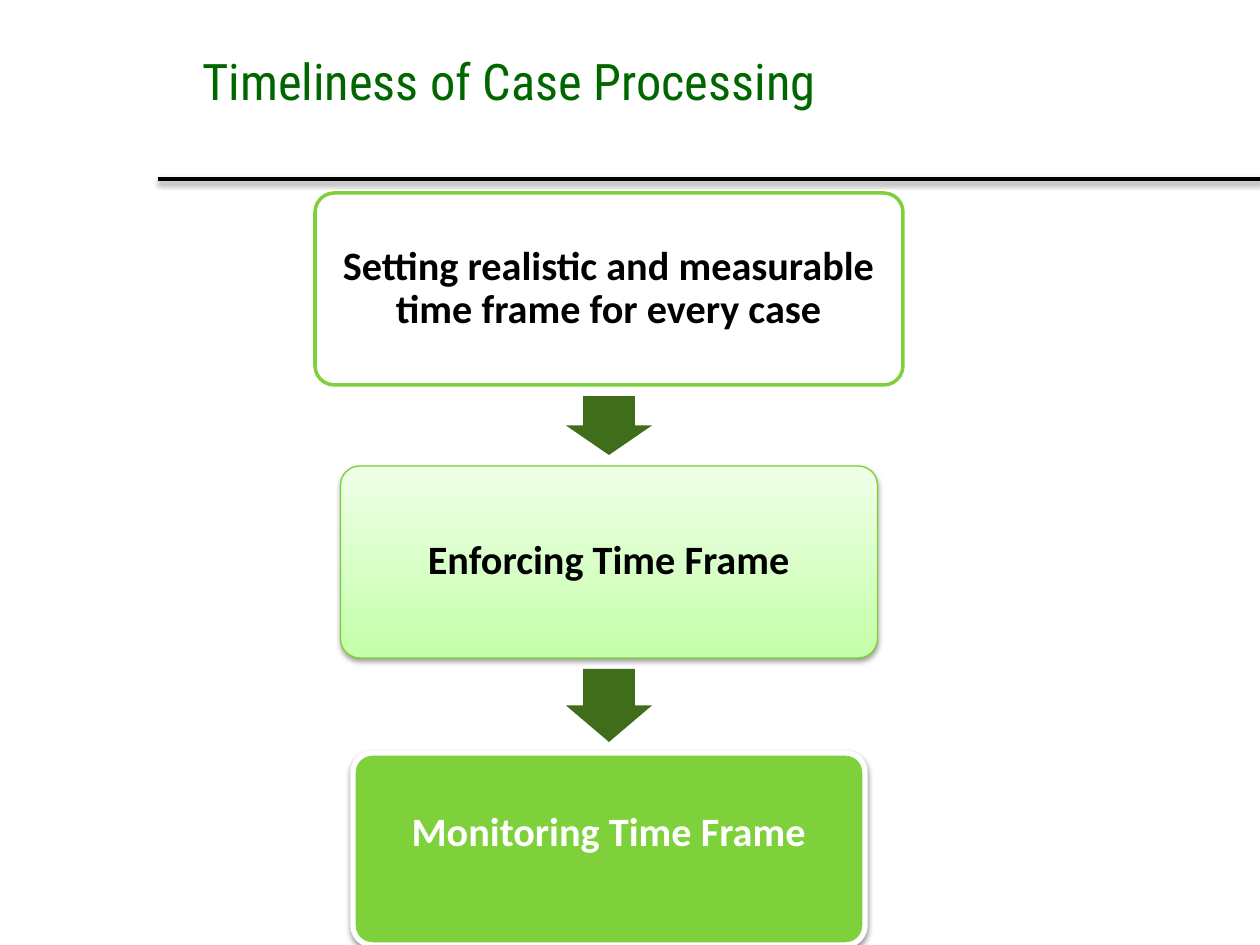
from lxml import etree
from pptx import Presentation
from pptx.dml.color import RGBColor
from pptx.enum.shapes import MSO_CONNECTOR, MSO_SHAPE
from pptx.enum.text import MSO_ANCHOR, PP_ALIGN
from pptx.oxml.ns import qn
from pptx.util import Emu, Pt

ROUND = MSO_SHAPE.ROUNDED_RECTANGLE
DOWN = MSO_SHAPE.DOWN_ARROW
STRAIGHT = MSO_CONNECTOR.STRAIGHT
MIDDLE = MSO_ANCHOR.MIDDLE
CENTER = PP_ALIGN.CENTER

SCALE = 914400 / 126
MID = 609
STEP_H = 192
PAD = 13
STEPS = [
    dict(text="Setting realistic and measurable time frame for every case",
         top=193, width=588, fills=["FFFFFF"], edge="7FD13B", weight=2,
         ink="000000", shade=False, space=0.9, foot=PAD),
    dict(text="Enforcing Time Frame",
         top=466, width=537, fills=["C4FFAA", "EFFFE8"], edge="7CD036",
         weight=0.75, ink="000000", shade=True, space=0.9, foot=PAD),
    dict(text="Monitoring Time Frame",
         top=753, width=512, fills=["7FD13B"], edge="FFFFFF", weight=3,
         ink="FFFFFF", shade=True, space=1.0, foot=51),
]


def px(n):
    """Turn pixels into EMU."""
    return Emu(round(n * SCALE))


def color(code):
    """Turn a hex string into a colour."""
    return RGBColor.from_string(code)


def style(font, name, size, ink, bold=False):
    """Set the look of a font."""
    font.name, font.size, font.bold = name, Pt(size), bold
    font.color.rgb = color(ink)


def shadow(props):
    """Add a soft shadow below to the shape properties."""
    effects = props.find(qn("a:effectLst"))
    if effects is None:
        effects = etree.SubElement(props, qn("a:effectLst"))
    outer = etree.SubElement(effects, qn("a:outerShdw"), blurRad="40000",
                             dist="20000", dir="5400000", rotWithShape="0")
    black = etree.SubElement(outer, qn("a:srgbClr"), val="000000")
    etree.SubElement(black, qn("a:alpha"), val="38000")


def header(slide, left, top, width, height):
    """Place the title and the rule under it."""
    box = slide.shapes.add_textbox(px(left + 32), px(top), px(width - 74), px(84))
    frame = box.text_frame
    frame.word_wrap = True
    frame.vertical_anchor = MIDDLE
    frame.text = "Timeliness of Case Processing"
    style(frame.paragraphs[0].runs[0].font, "Roboto Condensed", 28.8, "006600")
    base = px(top + height)
    rule = slide.shapes.add_connector(STRAIGHT, px(left), base, px(left + width), base)
    rule.line.color.rgb = color("000000")
    rule.line.width = Pt(2)
    shadow(rule._element.spPr)


def step(slide, text, top, width, fills, edge, weight, ink, shade, space, foot):
    """Place one rounded step, centred on the column."""
    box = slide.shapes.add_shape(ROUND, px(MID - width / 2), px(top),
                                 px(width), px(STEP_H))
    box.adjustments[0] = 0.1
    box.shadow.inherit = False
    if len(fills) > 1:
        box.fill.gradient()
        box.fill.gradient_angle = 90
        for stop, code in zip(box.fill.gradient_stops, fills):
            stop.color.rgb = color(code)
    else:
        box.fill.solid()
        box.fill.fore_color.rgb = color(fills[0])
    box.line.color.rgb = color(edge)
    box.line.width = Pt(weight)
    if shade:
        shadow(box._element.spPr)
    frame = box.text_frame
    frame.word_wrap = True
    frame.vertical_anchor = MIDDLE
    frame.margin_left = frame.margin_right = frame.margin_top = px(PAD)
    frame.margin_bottom = px(foot)
    frame.text = text
    para = frame.paragraphs[0]
    para.alignment = CENTER
    para.line_spacing = space
    style(para.runs[0].font, "Calibri", 23, ink, True)


def arrow(slide, top, height):
    """Place a down arrow, centred on the column."""
    mark = slide.shapes.add_shape(DOWN, px(MID - 43), px(top), px(86), px(height))
    mark.adjustments[0] = 0.6
    mark.adjustments[1] = 0.5
    mark.shadow.inherit = False
    mark.fill.solid()
    mark.fill.fore_color.rgb = color("3F6D19")
    mark.line.fill.background()


def flow(slide):
    """Place the steps and an arrow in each gap between them."""
    for item in STEPS:
        step(slide, **item)
    for upper, lower in zip(STEPS, STEPS[1:]):
        start = upper["top"] + STEP_H + 11
        arrow(slide, start, lower["top"] - 11 - start)


def main():
    """Build and save the slide."""
    deck = Presentation()
    deck.slide_width, deck.slide_height = px(1260), px(945)
    slide = deck.slides.add_slide(deck.slide_layouts[6])
    header(slide, 158, 38, 1102, 141)
    flow(slide)
    deck.save("out.pptx")


if __name__ == "__main__":
    main()
